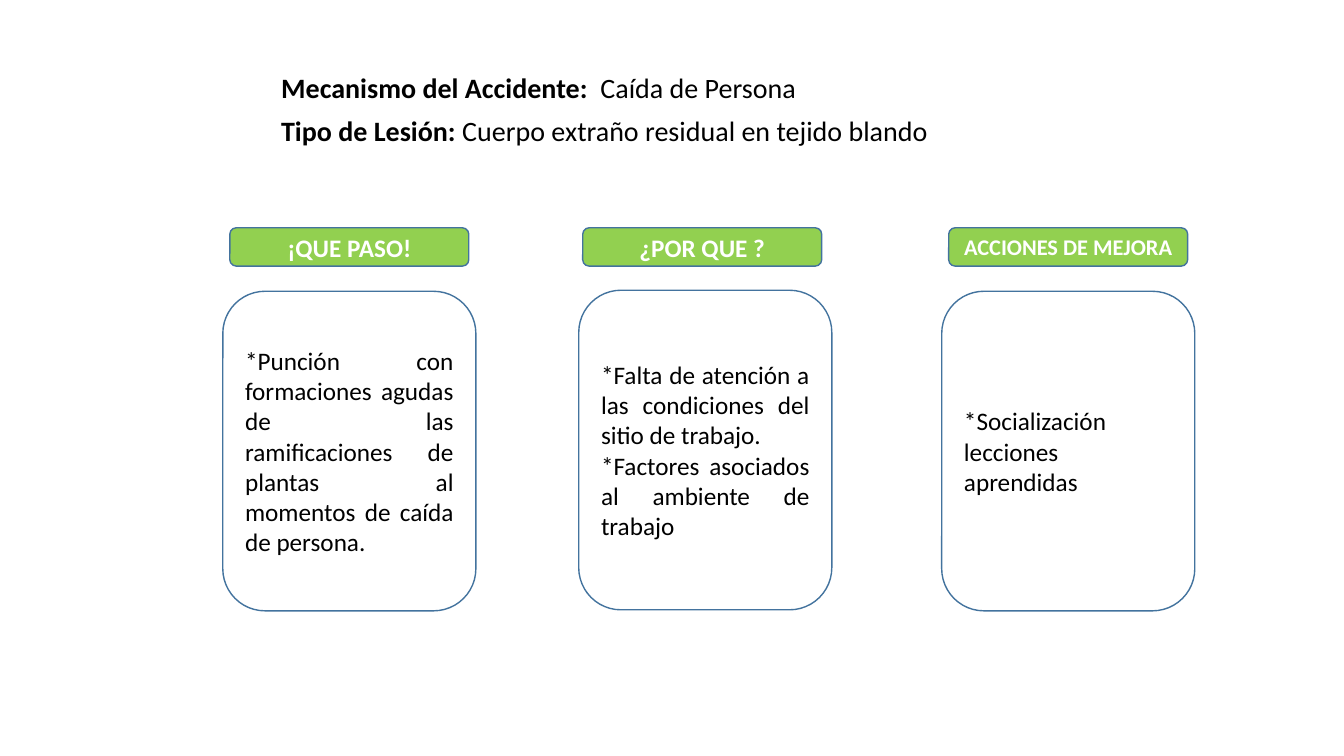
from pptx import Presentation
from pptx.dml.color import RGBColor
from pptx.enum.shapes import MSO_SHAPE as SHAPE
from pptx.enum.text import MSO_ANCHOR as ANCHOR, MSO_AUTO_SIZE as FIT, PP_ALIGN as ALIGN
from pptx.util import Inches, Pt

BLACK, WHITE, GREEN, BLUE = "000000", "FFFFFF", "92D050", "43739E"

# Label, value, box (left, top, width, height)
FACTS = [
    ("Mecanismo del Accidente:  ", "Caída de Persona", (2.69, 0.65, 5.85, 0.44)),
    ("Tipo de Lesión: ", "Cuerpo extraño residual en tejido blando", (2.69, 1.08, 10.43, 0.44)),
]
# Heading, heading size, heading left, card left, card top, card paragraphs
COLUMNS = [
    ("¡QUE PASO!", 18, 2.28, 2.21, 2.89,
     ["*Punción con formaciones agudas de las ramificaciones de plantas  al "
      "momentos de caída de persona."]),
    ("¿POR QUE ?", 18, 5.78, 5.74, 2.88,
     ["*Falta de atención a las condiciones del sitio de trabajo.",
      "*Factores asociados al ambiente de trabajo"]),
    ("ACCIONES DE MEJORA", 16, 9.41, 9.34, 2.89,
     ["*Socialización lecciones aprendidas"]),
]


def rgb(value):
    return RGBColor.from_string(value)


def add_run(p, text, size, color, bold=False):
    r = p.add_run()
    r.text = text
    for name, value in {"name": "Calibri", "size": Pt(size), "bold": bold}.items():
        setattr(r.font, name, value)
    r.font.color.rgb = rgb(color)


def add_fact(s, label, value, box):
    """One line with a bold label and a plain value."""
    tf = s.shapes.add_textbox(*map(Inches, box)).text_frame
    tf.word_wrap = True
    tf.auto_size = FIT.SHAPE_TO_FIT_TEXT
    p = tf.paragraphs[0]
    add_run(p, label, 20, BLACK, bold=True)
    add_run(p, value, 20, BLACK)


def add_panel(s, box, fill, lines, align, size, color, bold=False):
    """Rounded rectangle with one paragraph for each line."""
    sp = s.shapes.add_shape(SHAPE.ROUNDED_RECTANGLE, *map(Inches, box))
    sp.shadow.inherit = False
    sp.fill.solid()
    sp.fill.fore_color.rgb = rgb(fill)
    sp.line.color.rgb = rgb(BLUE)
    sp.line.width = Pt(1)
    tf = sp.text_frame
    tf.word_wrap = True
    tf.vertical_anchor = ANCHOR.MIDDLE
    for i, line in enumerate(lines):
        p = tf.add_paragraph() if i else tf.paragraphs[0]
        p.alignment = align
        add_run(p, line, size, color, bold)


def add_column(s, heading, size, heading_left, card_left, card_top, lines):
    """Card with its green heading above."""
    add_panel(s, (card_left, card_top, 2.51, 3.17), WHITE, lines, ALIGN.JUSTIFY, 18, BLACK)
    add_panel(s, (heading_left, 2.26, 2.37, 0.38), GREEN, [heading], ALIGN.CENTER,
              size, WHITE, bold=True)


def main():
    prs = Presentation()
    prs.slide_width, prs.slide_height = Inches(13.33), Inches(7.5)
    s = prs.slides.add_slide(prs.slide_layouts[6])
    # Accident facts
    for fact in FACTS:
        add_fact(s, *fact)
    # Three columns
    for column in COLUMNS:
        add_column(s, *column)
    prs.save("out.pptx")


if __name__ == "__main__":
    main()
